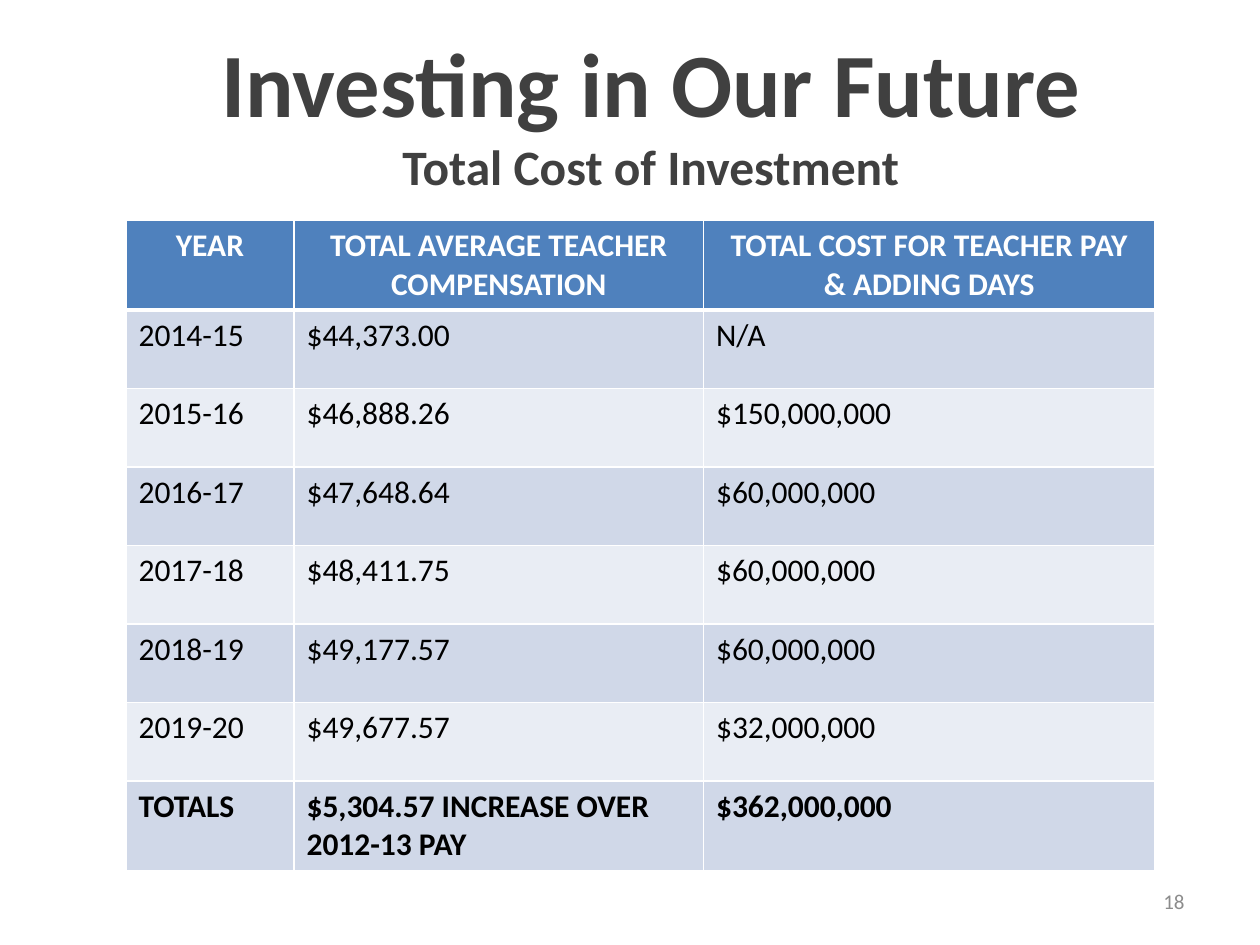
from lxml.etree import SubElement
from pptx import Presentation
from pptx.dml.color import RGBColor as RGB
from pptx.enum.text import MSO_ANCHOR as Anchor, MSO_AUTO_SIZE as Fit, PP_ALIGN as Align
from pptx.oxml.ns import qn
from pptx.util import Pt

FONT = "Calibri"
WHITE, BLACK = "FFFFFF", "000000"
HEAD, BANDS = "4F81BD", ("D0D8E8", "E9EDF4")
COLS = (96, 234, 258)
ROW = 44.9
ROWS = [
    ("YEAR", "TOTAL AVERAGE TEACHER COMPENSATION", "TOTAL COST FOR TEACHER PAY & ADDING DAYS"),
    ("2014-15", "$44,373.00", "N/A"),
    ("2015-16", "$46,888.26", "$150,000,000"),
    ("2016-17", "$47,648.64", "$60,000,000"),
    ("2017-18", "$48,411.75", "$60,000,000"),
    ("2018-19", "$49,177.57", "$60,000,000"),
    ("2019-20", "$49,677.57", "$32,000,000"),
    ("TOTALS", "$5,304.57 INCREASE OVER 2012-13 PAY", "$362,000,000"),
]


def color(code):
    return RGB.from_string(code)


def style(para, size, code, bold=False, align=Align.LEFT):
    para.alignment = align
    font = para.font
    font.name, font.size, font.bold = FONT, Pt(size), bold
    font.color.rgb = color(code)


def place(shape, x, y, w, h):
    shape.left, shape.top, shape.width, shape.height = Pt(x), Pt(y), Pt(w), Pt(h)


def add_title(slide, x, y, w, h):
    shape = slide.shapes.title
    place(shape, x, y, w, h)
    frame = shape.text_frame
    frame.text = "Investing in Our Future\nTotal Cost of Investment"
    frame.word_wrap, frame.auto_size = True, Fit.NONE
    frame.vertical_anchor = Anchor.TOP
    for para, size in zip(frame.paragraphs, (51.7, 28.3)):
        style(para, size, "404040", True, Align.CENTER)


def edge(cell, sides):
    """Draw white borders; sides maps L, R, T, B to widths in points."""
    props = cell._tc.get_or_add_tcPr()
    for i, (side, width) in enumerate(sides.items()):
        line = SubElement(props, qn(f"a:ln{side}"), w=str(Pt(width)))
        fill = SubElement(line, qn("a:solidFill"))
        SubElement(fill, qn("a:srgbClr"), val=WHITE)
        props.insert(i, line)


def add_costs(slide, x, y):
    last = len(ROWS) - 1
    table = slide.shapes.add_table(len(ROWS), len(COLS), Pt(x), Pt(y),
                                   Pt(sum(COLS)), Pt(ROW * len(ROWS))).table
    for col, width in zip(table.columns, COLS):
        col.width = Pt(width)
    for r, texts in enumerate(ROWS):
        table.rows[r].height = Pt(ROW)
        head = r == 0
        for c, text in enumerate(texts):
            cell = table.cell(r, c)
            cell.text = text
            cell.fill.solid()
            cell.fill.fore_color.rgb = color(HEAD if head else BANDS[(r - 1) % 2])
            style(cell.text_frame.paragraphs[0], 18, WHITE if head else BLACK,
                  r in (0, last), Align.CENTER if head else Align.LEFT)
            # A heavier rule parts the header from the body
            edge(cell, {"L": 1, "R": 1, "T": 3 if r == 1 else 1, "B": 3 if head else 1})


def add_number(slide, x, y, w, h):
    frame = slide.shapes.add_textbox(Pt(x), Pt(y), Pt(w), Pt(h)).text_frame
    frame.text = "18"
    frame.word_wrap = True
    frame.vertical_anchor = Anchor.MIDDLE
    style(frame.paragraphs[0], 12, "8C8C8C", align=Align.RIGHT)


def main():
    deck = Presentation()
    deck.slide_width, deck.slide_height = Pt(720), Pt(540)
    slide = deck.slides.add_slide(deck.slide_layouts[5])
    add_title(slide, 12, 12, 720, 120)
    add_costs(slide, 72, 126)
    add_number(slide, 516, 500.5, 168, 28.75)
    deck.save("out.pptx")


if __name__ == "__main__":
    main()
